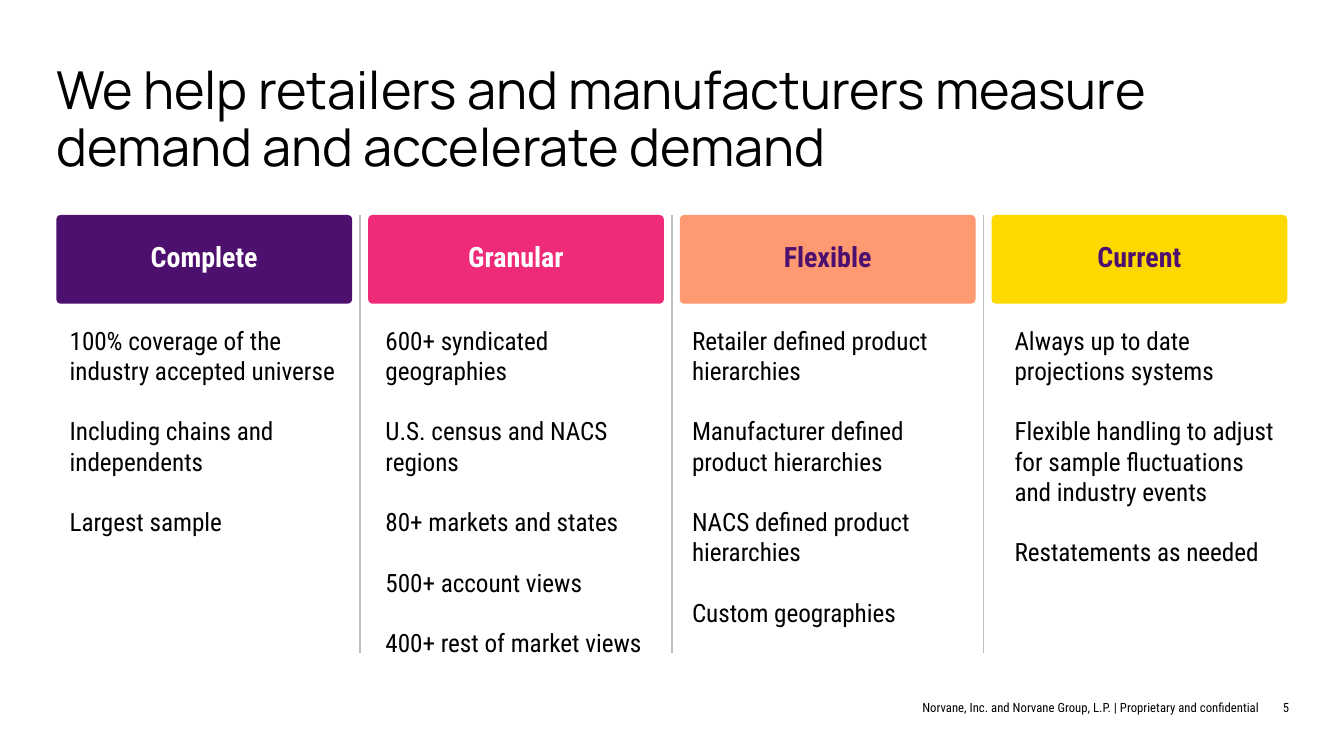
from pptx import Presentation
from pptx.dml.color import RGBColor
from pptx.enum.shapes import MSO_CONNECTOR, MSO_SHAPE
from pptx.enum.text import MSO_ANCHOR, MSO_AUTO_SIZE, PP_ALIGN
from pptx.oxml.ns import qn
from pptx.util import Pt
from lxml.etree import SubElement

BODY = "Roboto Condensed"
LEFT, TOP, WIDE, HIGH = 30.25, 115.2, 158.4, 234.75
STEP = 167

# heading, fill, heading colour, text offset, text width, points
COLUMNS = [
    ("Complete", "4E106F", "FFFFFF", 0, 163.4,
     ["100% coverage of the industry accepted universe",
      "Including chains and independents",
      "Largest sample"]),
    ("Granular", "EF2A79", "FFFFFF", 2.2, 160.6,
     ["600+ syndicated geographies",
      "U.S. census and NACS regions",
      "80+ markets and states",
      "500+ account views",
      "400+ rest of market views"]),
    ("Flexible", "FF9971", "4E106F", -0.6, 158.4,
     ["Retailer defined product hierarchies",
      "Manufacturer defined product hierarchies",
      "NACS defined product hierarchies",
      "Custom geographies"]),
    ("Current", "FDD900", "4E106F", 5.2, 158.4,
     ["Always up to date projections systems",
      "Flexible handling to adjust for sample fluctuations and industry events",
      "Restatements as needed"]),
]


def paint(target, color):
    """Give a fill, line or font a solid hex colour."""
    if hasattr(target, "solid"):
        target.solid()
        target.fore_color.rgb = RGBColor.from_string(color)
    else:
        target.color.rgb = RGBColor.from_string(color)


def style(para, size, color="000000", name=BODY, bold=False):
    font = para.font
    font.name, font.size, font.bold = name, Pt(size), bold
    paint(font, color)


def clear(frame):
    """Remove the insets of a text frame."""
    frame.margin_left = frame.margin_right = 0
    frame.margin_top = frame.margin_bottom = 0


def add_title(slide, x, y, w, h, text):
    title = slide.shapes.title
    title.left, title.top, title.width, title.height = Pt(x), Pt(y), Pt(w), Pt(h)
    frame = title.text_frame
    clear(frame)
    frame.word_wrap = True
    frame.auto_size = MSO_AUTO_SIZE.NONE
    frame.vertical_anchor = MSO_ANCHOR.TOP
    frame.text = text
    para = frame.paragraphs[0]
    para.alignment = PP_ALIGN.LEFT
    para.line_spacing = 0.9
    style(para, 28, name="Manrope")


def add_head(slide, x, y, w, h, text, fill, color):
    head = slide.shapes.add_shape(
        MSO_SHAPE.ROUNDED_RECTANGLE, Pt(x), Pt(y), Pt(w), Pt(h))
    head.adjustments[0] = 0.05
    head.shadow.inherit = False
    paint(head.fill, fill)
    head.line.fill.background()
    frame = head.text_frame
    frame.vertical_anchor = MSO_ANCHOR.MIDDLE
    frame.text = text
    para = frame.paragraphs[0]
    para.alignment = PP_ALIGN.CENTER
    para.line_spacing = Pt(15)
    style(para, 15, color, bold=True)


def add_points(slide, x, y, w, h, points):
    frame = slide.shapes.add_textbox(Pt(x), Pt(y), Pt(w), Pt(h)).text_frame
    frame.word_wrap = True
    for i, point in enumerate(points):
        para = frame.add_paragraph() if i else frame.paragraphs[0]
        para.text = point
        para.space_before = Pt(16.2 if i else 0)
        style(para, 13.5)


def add_rule(slide, x, y, h):
    rule = slide.shapes.add_connector(
        MSO_CONNECTOR.STRAIGHT, Pt(x), Pt(y), Pt(x), Pt(y + h))
    rule.line.width = Pt(0.75)
    paint(rule.line, "BFBFBF")
    SubElement(rule._element.spPr, qn("a:effectLst"))


def add_column(slide, x, y, w, h, column):
    name, fill, color, shift, room, points = column
    add_head(slide, x, y, w, 47.5, name, fill, color)
    add_points(slide, x + shift, y + 55.4, room, h - 55.4, points)


def add_note(slide, x, y, w, h, text):
    """Place a small right-aligned footer text."""
    frame = slide.shapes.add_textbox(Pt(x), Pt(y), Pt(w), Pt(h)).text_frame
    clear(frame)
    frame.word_wrap = True
    frame.vertical_anchor = MSO_ANCHOR.BOTTOM
    frame.text = text
    para = frame.paragraphs[0]
    para.alignment = PP_ALIGN.RIGHT
    style(para, 6.8)


def main():
    deck = Presentation()
    deck.slide_width, deck.slide_height = Pt(720), Pt(405)
    slide = deck.slides.add_slide(deck.slide_layouts[5])
    add_title(slide, LEFT, 34.5, 661, 32.4,
              "We help retailers and manufacturers measure demand "
              "and accelerate demand")
    for i, column in enumerate(COLUMNS):
        x = LEFT + i * STEP
        add_column(slide, x, TOP, WIDE, HIGH, column)
        if i:
            add_rule(slide, x - (STEP - WIDE) / 2, TOP, HIGH)
    add_note(slide, 447.8, 372.6, 226.8, 10.6,
             "Norvane, Inc. and Norvane Group, L.P. | Proprietary and confidential")
    add_note(slide, 674.6, 373, 16, 10.2, "5")
    deck.save("out.pptx")


if __name__ == "__main__":
    main()
